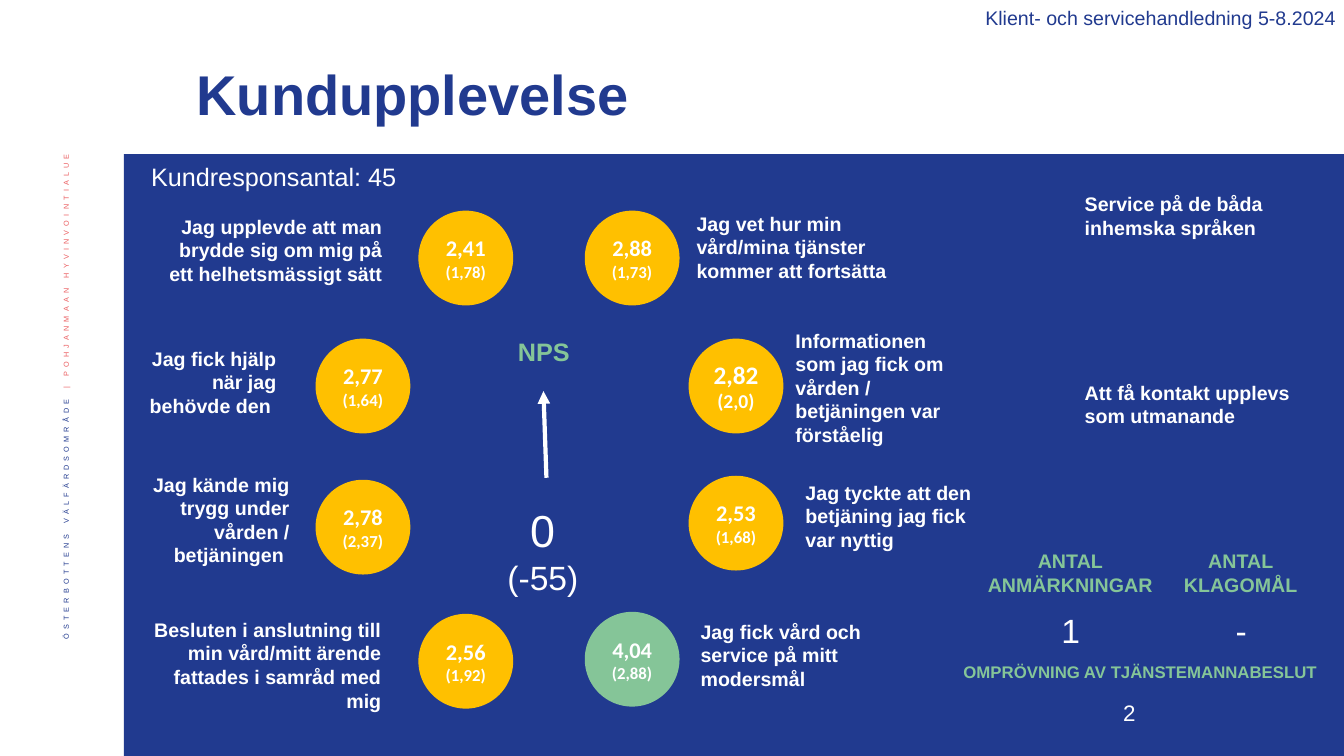
"""Build the customer experience slide with score circles around the NPS result."""
from dataclasses import dataclass

from lxml.etree import SubElement
from pptx import Presentation
from pptx.dml.color import RGBColor
from pptx.enum.shapes import MSO_CONNECTOR as Connector, MSO_SHAPE as Preset
from pptx.enum.text import MSO_ANCHOR as Anchor, MSO_AUTO_SIZE as AutoSize, PP_ALIGN as Align
from pptx.oxml.ns import qn
from pptx.shapes.autoshape import Shape
from pptx.slide import Slide
from pptx.util import Inches, Pt

COLORS = {
    "navy": "213A8F",
    "white": "FFFFFF",
    "green": "85C598",
    "amber": "FFC000",
    "coral": "EB5C5F",
}
CIRCLE_SIZE = 0.94


@dataclass(frozen=True)
class Score:
    value: str
    previous: str
    left: float
    top: float
    statement: str
    box: tuple[float, float, float, float]
    align: Align = Align.LEFT
    fill: str = "amber"
    size: int = 16


@dataclass(frozen=True)
class Label:
    text: str
    box: tuple[float, float, float, float]
    size: int = 14
    color: str = "white"
    bold: bool = False
    align: Align = Align.CENTER


SCORES = [
    Score("2,41", "(1,78)", 4.15, 2.09,
          "Jag upplevde att man brydde sig om mig på ett helhetsmässigt sätt",
          (1.4, 2.08, 2.49, 0.81), Align.RIGHT),
    Score("2,77", "(1,64)", 3.13, 3.36, "Jag fick hjälp när jag behövde den ",
          (1.23, 3.39, 1.61, 0.81), Align.RIGHT),
    Score("2,78", "(2,37)", 3.13, 4.76, "Jag kände mig trygg under vården / betjäningen ",
          (1.09, 4.64, 1.88, 1.04), Align.RIGHT),
    Score("2,56", "(1,92)", 4.15, 6.09,
          "Besluten i anslutning till min vård/mitt ärende fattades i samråd med mig",
          (1.23, 6.08, 2.65, 0.81), Align.RIGHT),
    Score("2,88", "(1,73)", 5.8, 2.09, "Jag vet hur min vård/mina tjänster kommer att fortsätta",
          (6.81, 2.05, 2.42, 0.81)),
    Score("2,82", "(2,0)", 6.83, 3.36,
          "Informationen som jag fick om vården / betjäningen var förståelig",
          (7.79, 3.21, 1.78, 1.28), size=18),
    Score("2,53", "(1,68)", 6.83, 4.72, "Jag tyckte att den betjäning jag fick var nyttig",
          (7.89, 4.72, 1.98, 0.81)),
    Score("4,04", "(2,88)", 5.8, 6.07, "Jag fick vård och service på mitt modersmål",
          (6.85, 6.1, 1.85, 0.81), fill="green"),
]

LABELS = [
    Label("NPS", (5.01, 3.29, 0.77, 0.4), 18, "green", True),
    Label("Kundresponsantal: 45", (1.4, 1.55, 2.8, 0.4), 18, align=Align.LEFT),
    Label("ANTAL ANMÄRKNINGAR", (9.6, 5.4, 2.03, 0.57), 14, "green", True),
    Label("1", (9.93, 6, 1.38, 0.5), 24),
    Label("ANTAL KLAGOMÅL", (11.39, 5.4, 1.83, 0.57), 14, "green", True),
    Label("-", (11.62, 6, 1.38, 0.5), 24),
    Label("Klient- och servicehandledning 5-8.2024", (5.24, 0.01, 8.11, 0.34), 14, "navy",
          align=Align.RIGHT),
    Label("OMPRÖVNING AV TJÄNSTEMANNABESLUT", (9.1, 6.52, 4.42, 0.3), 12, "green", True),
    Label("2", (11.04, 6.89, 0.94, 0.37), 16, align=Align.LEFT),
]


def rgb(name: str) -> RGBColor:
    return RGBColor.from_string(COLORS[name])


def write(para, text: str, *, size: float = 14, color: str = "white", bold: bool = False,
          font: str = "Arial", align: Align = Align.LEFT):
    para.alignment = align
    span = para.add_run()
    span.text = text
    span.font.name = font
    span.font.size = Pt(size)
    span.font.bold = bold
    span.font.color.rgb = rgb(color)
    return span


def add_box(page: Slide, place: tuple[float, float, float, float]) -> Shape:
    box = page.shapes.add_textbox(*map(Inches, place))
    box.text_frame.word_wrap = True
    box.text_frame.auto_size = AutoSize.SHAPE_TO_FIT_TEXT
    return box


def add_label(page: Slide, label: Label) -> None:
    box = add_box(page, label.box)
    write(box.text_frame.paragraphs[0], label.text, size=label.size, color=label.color,
          bold=label.bold, align=label.align)


def add_filled(page: Slide, preset: Preset, place: tuple[float, float, float, float],
               fill: str) -> Shape:
    shape = page.shapes.add_shape(preset, *map(Inches, place))
    shape.shadow.inherit = False
    shape.fill.solid()
    shape.fill.fore_color.rgb = rgb(fill)
    shape.line.fill.background()
    return shape


def add_score(page: Slide, score: Score) -> None:
    add_label(page, Label(score.statement, score.box, bold=True, align=score.align))
    circle = add_filled(page, Preset.OVAL, (score.left, score.top, CIRCLE_SIZE, CIRCLE_SIZE),
                        score.fill)
    frame = circle.text_frame
    frame.word_wrap = True
    frame.vertical_anchor = Anchor.MIDDLE
    frame.margin_left = frame.margin_right = frame.margin_top = frame.margin_bottom = 0
    for text, size in ((score.value + " ", score.size), (score.previous, score.size - 4)):
        write(frame.paragraphs[0], text, size=size, bold=True, font="Calibri",
              align=Align.CENTER)


def add_side_band(page: Slide) -> None:
    frame = add_box(page, (0.42, 1.37, 0.52, 5.73)).text_frame
    frame.auto_size = AutoSize.NONE
    frame.vertical_anchor = Anchor.MIDDLE
    frame._txBody.bodyPr.set("vert", "vert270")
    para = frame.paragraphs[0]
    para.line_spacing = 0.9
    for text, color in (("ÖSTERBOTTENS VÄLFÄRDSOMRÅDE ", "navy"),
                        ("| POHJANMAAN HYVINVOINTIALUE ", "coral")):
        span = write(para, text, size=9, color=color, align=Align.RIGHT)
        span.font._element.set("baseline", "30000")
        span.font._element.set("spc", "300")


def add_title(page: Slide) -> None:
    frame = add_box(page, (1.85, 0.47, 9.98, 0.99)).text_frame
    frame.auto_size = AutoSize.NONE
    frame.vertical_anchor = Anchor.MIDDLE
    frame.paragraphs[0].line_spacing = 0.9
    write(frame.paragraphs[0], "Kundupplevelse", size=40, color="navy", bold=True)


def add_nps_result(page: Slide) -> None:
    ends = map(Inches, (5.42, 4.74, 5.39, 3.88))
    arrow = page.shapes.add_connector(Connector.STRAIGHT, *ends)
    arrow.line.color.rgb = rgb("white")
    arrow.line.width = Pt(3)
    SubElement(arrow.line._get_or_add_ln(), qn("a:tailEnd"), type="triangle")
    SubElement(arrow._element.spPr, qn("a:effectLst"))
    frame = add_box(page, (4.47, 4.94, 1.83, 1.04)).text_frame
    write(frame.paragraphs[0], "0", size=32, align=Align.CENTER)
    write(frame.add_paragraph(), "(-55)", size=24, align=Align.CENTER)


def add_feedback(page: Slide) -> None:
    frame = add_box(page, (10.66, 1.86, 2.63, 2.46)).text_frame
    write(frame.paragraphs[0], "Service på de båda inhemska språken", bold=True)
    contact = frame.add_paragraph()
    contact.space_before = Pt(101)
    write(contact, "Att få kontakt upplevs som utmanande", bold=True)


def main() -> None:
    deck = Presentation()
    deck.slide_width, deck.slide_height = Inches(13.33), Inches(7.5)
    page = deck.slides.add_slide(deck.slide_layouts[6])
    add_side_band(page)
    add_filled(page, Preset.RECTANGLE, (1.23, 1.53, 12.1, 5.97), "navy")
    add_title(page)
    add_nps_result(page)
    for score in SCORES:
        add_score(page, score)
    add_feedback(page)
    for label in LABELS:
        add_label(page, label)
    deck.save("out.pptx")


if __name__ == "__main__":
    main()
